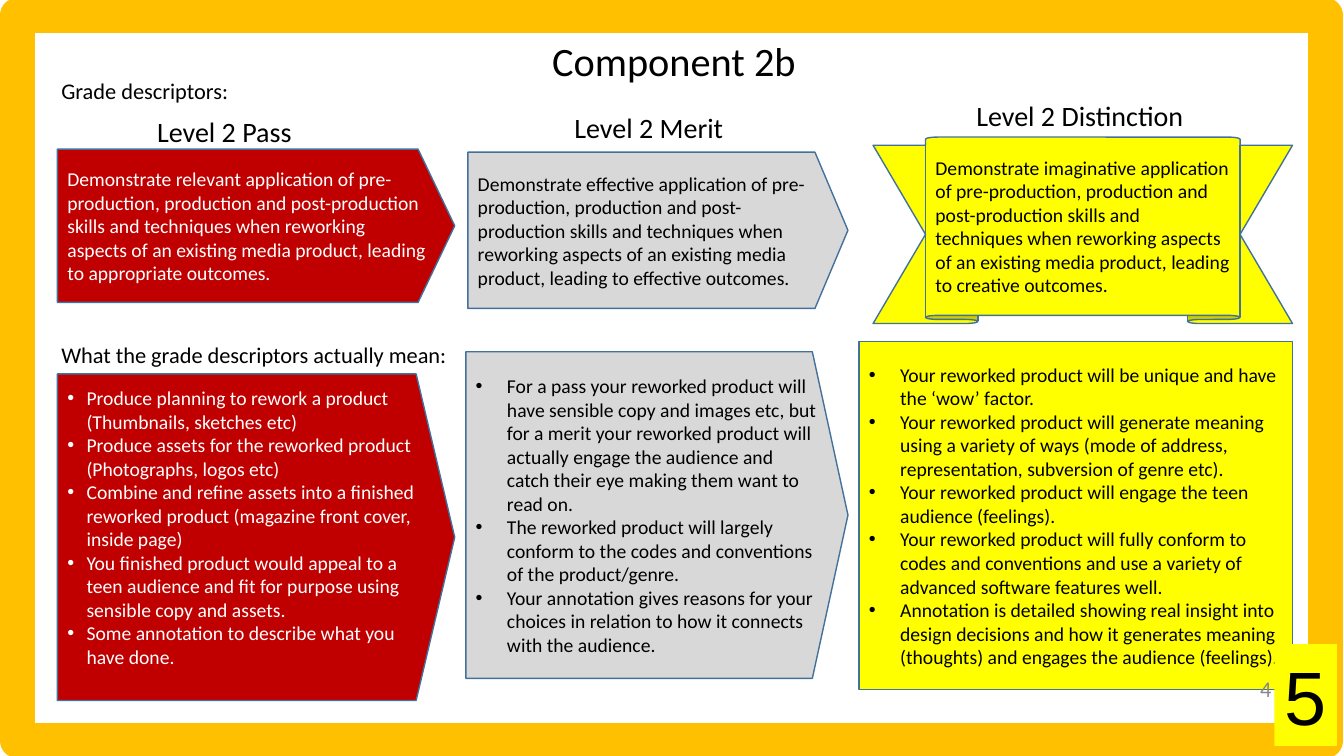
import pptx
import pptx.util
import pptx.dml.color
import pptx.enum.shapes
import pptx.enum.text
import pptx.oxml.ns
import lxml.etree

Inches = pptx.util.Inches
Shape = pptx.enum.shapes.MSO_SHAPE
Align = pptx.enum.text.PP_ALIGN
Anchor = pptx.enum.text.MSO_ANCHOR

BLACK, WHITE, GREY = "000000", "FFFFFF", "888888"
RED, SILVER, YELLOW = "C00000", "D8D8D8", "FFFF00"
EDGE, GOLD = "42719B", "FFC000"

PASS = [
    "Produce planning to rework a product (Thumbnails, sketches etc)",
    "Produce assets for the reworked product (Photographs, logos etc)",
    "Combine and refine assets into a finished reworked product (magazine front cover, inside page)",
    "You finished product would appeal to a teen audience and fit for purpose using sensible copy and assets.",
    "Some annotation to describe what you have done.",
]
MERIT = [
    "For a pass your reworked product will have sensible copy and images etc, but for a merit your reworked "
    "product will actually engage the audience and catch their eye making them want to read on.",
    "The reworked product will largely conform to the codes and conventions of the product/genre.",
    "Your annotation gives reasons for your choices in relation to how it connects with the audience.",
]
TOP = [
    "Your reworked product will be unique and have the ‘wow’ factor.",
    "Your reworked product will generate meaning using a variety of ways (mode of address, representation, "
    "subversion of genre etc).",
    "Your reworked product will engage the teen audience (feelings).",
    "Your reworked product will fully conform to codes and conventions and use a variety of advanced "
    "software features well.",
    "Annotation is detailed showing real insight into design decisions and how it generates meaning "
    "(thoughts) and engages the audience (feelings).",
]


def paint(part, color):
    """Give a fill, line fill or font colour a solid hex colour."""
    if hasattr(part, "solid"):
        part.solid()
        part = part.fore_color
    else:
        part = part.color
    part.rgb = pptx.dml.color.RGBColor.from_string(color)


def bullet(par, indent, color):
    """Give a paragraph a hanging round bullet."""
    props = par._p.get_or_add_pPr()
    props.set("marL", str(Inches(indent)))
    props.set("indent", str(-Inches(indent)))
    qn = pptx.oxml.ns.qn
    tint = lxml.etree.SubElement(props, qn("a:buClr"))
    lxml.etree.SubElement(tint, qn("a:srgbClr")).set("val", color)
    lxml.etree.SubElement(props, qn("a:buFont")).set("typeface", "Arial")
    lxml.etree.SubElement(props, qn("a:buChar")).set("char", "•")


def write(frame, lines, size, color=BLACK, align=Align.LEFT, indent=0, face="Calibri"):
    """Fill a text frame with evenly styled paragraphs."""
    frame.word_wrap = True
    for i, line in enumerate(lines):
        par = frame.add_paragraph() if i else frame.paragraphs[0]
        par.text = line
        par.alignment = align
        if indent:
            bullet(par, indent, color)
        par.font.size = pptx.util.Pt(size)
        par.font.name = face
        paint(par.font, color)


def label(slide, place, text, size, color=BLACK, align=Align.LEFT):
    """Add a one-line text box and return its frame."""
    frame = slide.shapes.add_textbox(*map(Inches, place)).text_frame
    write(frame, [text], size, color, align)
    return frame


def panel(slide, kind, place, fill=None, line=EDGE, width=1, adjust=()):
    """Add a preset shape with the given fill and outline."""
    shape = slide.shapes.add_shape(kind, *map(Inches, place))
    shape.shadow.inherit = False
    for i, value in enumerate(adjust):
        shape.adjustments[i] = value
    if fill:
        paint(shape.fill, fill)
    else:
        shape.fill.background()
    if line:
        paint(shape.line, line)
        shape.line.width = pptx.util.Pt(width)
    else:
        shape.line.fill.background()
    shape.text_frame.vertical_anchor = Anchor.MIDDLE
    return shape


def main():
    """Build the grade descriptor slide."""
    deck = pptx.Presentation()
    deck.slide_width, deck.slide_height = Inches(13.33), Inches(7.5)
    slide = deck.slides.add_slide(deck.slide_layouts[5])

    title = slide.shapes.title
    title.left, title.top, title.width, title.height = map(Inches, (0.38, 0.34, 12.61, 0.57))
    title.text_frame.vertical_anchor = Anchor.MIDDLE
    write(title.text_frame, ["Component 2b"], 28.8, align=Align.CENTER)
    title.text_frame.paragraphs[0].line_spacing = 0.9

    panel(slide, Shape.RECTANGLE, (0.17, 0.15, 12.98, 7.2), line=GOLD, width=25)
    label(slide, (0.51, 0.72, 3.71, 0.37), "Grade descriptors:", 16)
    label(slide, (0.51, 3.34, 4.35, 0.37), "What the grade descriptors actually mean:", 16)

    arrow = Shape.PENTAGON
    grades = [
        (arrow, (0.57, 1.48, 3.94, 1.52), (0.239,), RED, WHITE, "relevant", "appropriate"),
        (arrow, (4.64, 1.51, 3.77, 1.55), (0.211,), SILVER, BLACK, "effective", "effective"),
        (Shape.UP_RIBBON, (8.66, 1.36, 4.16, 1.85), (0.044, 0.75), YELLOW, BLACK, "imaginative", "creative"),
    ]
    for kind, place, adjust, fill, color, skill, result in grades:
        text = (f"Demonstrate {skill} application of pre-production, production and post-production skills and "
                f"techniques when reworking aspects of an existing media product, leading to {result} outcomes.")
        write(panel(slide, kind, place, fill, adjust=adjust).text_frame, [text], 14, color)

    details = [
        (arrow, (0.57, 3.71, 3.94, 3.24), (0.118,), RED, WHITE, PASS, 0.19, 0.25),
        (arrow, (4.62, 3.49, 3.79, 3.24), (0.109,), SILVER, BLACK, MERIT, 0.31, 0.05),
        (Shape.RECTANGLE, (8.52, 3.39, 4.3, 3.45), (), YELLOW, BLACK, TOP, 0.31, 0.05),
    ]
    for kind, place, adjust, fill, color, lines, indent, foot in details:
        frame = panel(slide, kind, place, fill, adjust=adjust).text_frame
        frame.margin_bottom = Inches(foot)
        write(frame, lines, 14, color, indent=indent)

    heads = [("Pass", 1.45, 1.09, 1.55), ("Merit", 5.59, 1.05, 1.69), ("Distinction", 9.57, 0.93, 2.28)]
    for grade, left, top, width in heads:
        label(slide, (left, top, width, 0.44), f"Level 2 {grade}", 20, align=Align.CENTER)

    page = label(slide, (9.71, 6.63, 3, 0.4), "4", 16, GREY, Align.RIGHT)
    page.vertical_anchor = Anchor.MIDDLE
    badge = panel(slide, Shape.RECTANGLE, (12.64, 6.39, 0.62, 1.01), YELLOW, None).text_frame
    write(badge, ["5"], 54, align=Align.CENTER, face="Arial")
    badge.word_wrap = False

    deck.save("out.pptx")


if __name__ == "__main__":
    main()
